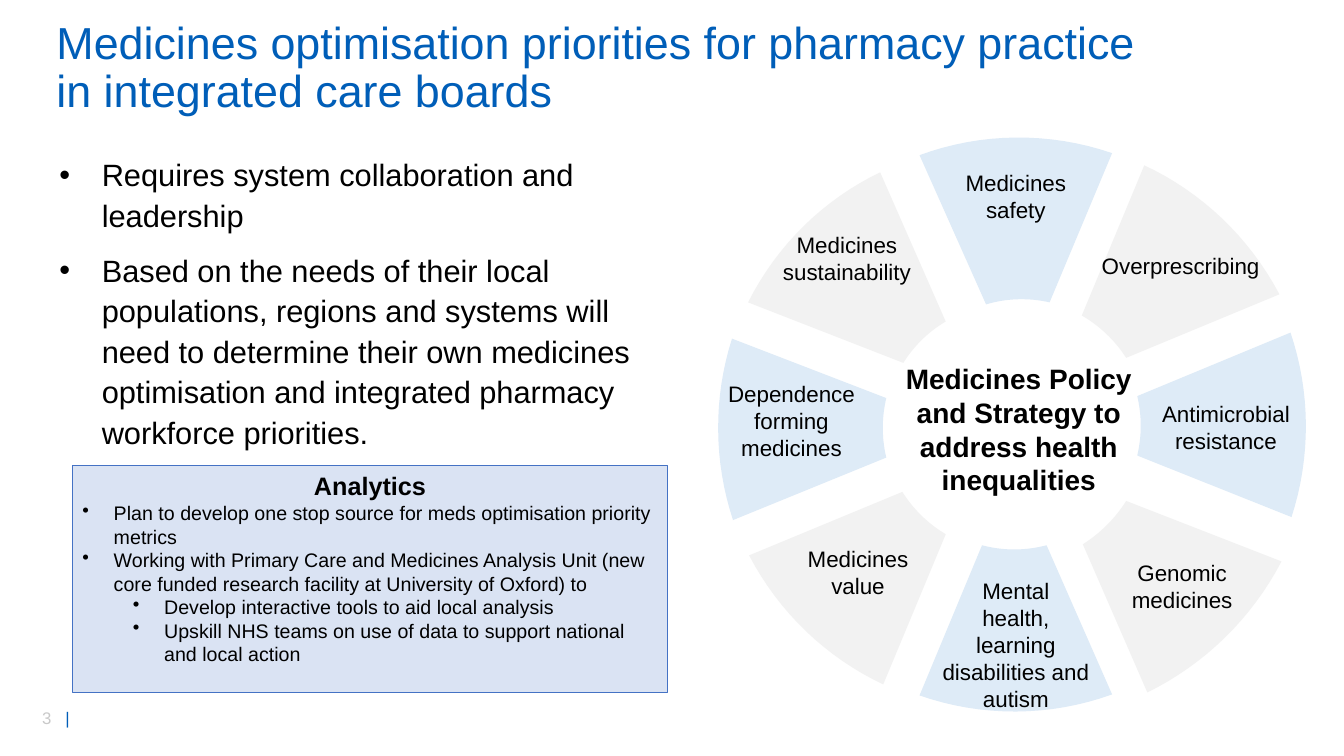
"""Builds the slide on medicines optimisation priorities."""
import math

from lxml import etree
from pptx import Presentation
from pptx.dml.color import RGBColor
from pptx.enum.shapes import MSO_SHAPE
from pptx.enum.text import MSO_ANCHOR, MSO_AUTO_SIZE, PP_ALIGN
from pptx.oxml.ns import qn
from pptx.util import Inches, Pt

LEFT, CENTER = PP_ALIGN.LEFT, PP_ALIGN.CENTER
TOP, MIDDLE = MSO_ANCHOR.TOP, MSO_ANCHOR.MIDDLE
NO_FIT = MSO_AUTO_SIZE.NONE
RECTANGLE = MSO_SHAPE.RECTANGLE

COLOURS = {
    "title": "005EB8", "text": "000000", "number": "C9C9C9",
    "grey": "F2F2F2", "pale": "DEEBF7", "panel": "DAE3F3", "edge": "4472C4",
}
WHEEL_CENTRE = (10.04, 4.21)
ARC_STEPS = 16

# colour, corners clockwise (outer start, outer end, inner end, inner start), text inset, lines
WEDGES = [
    ("grey", [(7.42, 3), (8.73, 1.71), (9.38, 3.19), (8.96, 3.6)], 0.58,
     ["Medicines sustainability"]),
    ("pale", [(7.27, 5.16), (7.26, 3.36), (8.79, 3.95), (8.79, 4.54)], 0, []),
    ("grey", [(8.76, 6.79), (7.43, 5.51), (8.95, 4.88), (9.38, 5.3)], 0, []),
    ("pale", [(11.03, 6.89), (9.12, 6.9), (9.74, 5.41), (10.38, 5.41)], 0.32,
     ["Mental", "health,", "learning disabilities and autism"]),
    ("grey", [(12.71, 5.57), (11.38, 6.87), (10.74, 5.4), (11.17, 4.97)], 0.58,
     ["Genomic medicines"]),
    ("pale", [(12.8, 3.3), (12.81, 5.13), (11.28, 4.52), (11.28, 3.93)], 0, []),
    ("grey", [(11.35, 1.64), (12.69, 2.92), (11.17, 3.55), (10.73, 3.13)], 0.86,
     ["Overprescribing"]),
    ("pale", [(9.12, 1.54), (11.03, 1.52), (10.41, 3), (9.78, 3.02)], 0.31,
     ["Medicines", "safety"]),
]
WHEEL_LABELS = [
    ((6.95, 3.72, 1.8, 0.91), "Dependence forming medicines", {}),
    ((11.18, 3.92, 1.96, 0.64), "Antimicrobial resistance", {}),
    ((7.68, 5.36, 1.66, 0.64), "Medicines value", {}),
    ((8.84, 3.54, 2.53, 1.45),
     "Medicines Policy and Strategy to address health inequalities",
     {"size": Pt(20), "bold": True}),
]
PRIORITIES = [
    "Requires system collaboration and leadership",
    "Based on the needs of their local populations, regions and systems will need to "
    "determine their own medicines optimisation and integrated pharmacy workforce priorities.",
]
ANALYTICS = [
    (0, "Plan to develop one stop source for meds optimisation priority metrics"),
    (0, "Working with Primary Care and Medicines Analysis Unit (new core funded "
        "research facility at University of Oxford) to"),
    (1, "Develop interactive tools to aid local analysis"),
    (1, "Upskill NHS teams on use of data to support national and local action"),
]


def arc(start, end):
    """Return points sweeping around the wheel centre from start to end."""
    centre_x, centre_y = WHEEL_CENTRE
    (r1, a1), (r2, a2) = [
        (math.dist(corner, WHEEL_CENTRE), math.atan2(corner[1] - centre_y, corner[0] - centre_x))
        for corner in (start, end)]
    sweep = math.remainder(a2 - a1, math.tau)
    points = []
    for step in range(ARC_STEPS + 1):
        share = step / ARC_STEPS
        radius, angle = r1 + (r2 - r1) * share, a1 + sweep * share
        points.append((Inches(centre_x + radius * math.cos(angle)),
                       Inches(centre_y + radius * math.sin(angle))))
    return points


class SlideBuilder:
    """Holds the text style and the current slide."""

    def __init__(self, slide):
        """Keep the slide and the default font."""
        self.slide = slide
        self.font = {"name": "Arial", "size": Pt(16), "bold": False}

    def run(self, paragraph, words, colour="text", **font):
        """Add styled words to a paragraph."""
        run = paragraph.add_run()
        run.text = words
        for name, value in {**self.font, **font}.items():
            setattr(run.font, name, value)
        run.font.color.rgb = RGBColor.from_string(COLOURS[colour])

    def frame(self, shape, **settings):
        """Format the text frame of a shape."""
        frame = shape.text_frame
        defaults = {"word_wrap": True, "auto_size": NO_FIT, "vertical_anchor": TOP}
        for name, value in {**defaults, **settings}.items():
            setattr(frame, name, value)
        return frame

    def paragraph(self, frame, first, **settings):
        """Return the first or a new paragraph with the given format."""
        paragraph = frame.paragraphs[0] if first else frame.add_paragraph()
        for name, value in settings.items():
            setattr(paragraph, name, value)
        return paragraph

    def bullet(self, paragraph, margin, hang):
        """Give a paragraph a hanging bullet."""
        properties = paragraph._p.get_or_add_pPr()
        properties.set("marL", str(Inches(margin)))
        properties.set("indent", str(-Inches(hang)))
        etree.SubElement(properties, qn("a:buChar")).set("char", "•")

    def place(self, placeholder, box):
        """Move a placeholder to its box."""
        for name, value in zip(("left", "top", "width", "height"), box):
            setattr(placeholder, name, Inches(value))
        return placeholder

    def title(self, box, words):
        """Fill the title placeholder."""
        frame = self.frame(self.place(self.slide.shapes.title, box), vertical_anchor=MIDDLE)
        heading = self.paragraph(frame, True, alignment=LEFT, line_spacing=0.9)
        self.run(heading, words, "title", size=Pt(32))

    def body(self, box, items):
        """Fill the body placeholder with a bullet list."""
        frame = self.frame(self.place(self.slide.placeholders[1], box),
                           margin_left=Inches(0.13), margin_right=Inches(0.13),
                           margin_top=Inches(0.07), margin_bottom=Inches(0.07))
        for index, words in enumerate(items):
            item = self.paragraph(frame, index == 0, line_spacing=1.1,
                                  space_before=Pt(10 if index else 0))
            self.bullet(item, 0.42, 0.42)
            self.run(item, words, size=Pt(22))

    def label(self, box, words, **font):
        """Add a centred text box."""
        frame = self.frame(self.slide.shapes.add_textbox(*map(Inches, box)))
        self.run(self.paragraph(frame, True, alignment=CENTER), words, **font)

    def fill(self, shape, colour):
        """Fill a shape flat, without a shadow."""
        shape.shadow.inherit = False
        shape.fill.solid()
        shape.fill.fore_color.rgb = RGBColor.from_string(COLOURS[colour])

    def wedge(self, colour, corners, inset, lines):
        """Add one segment of the wheel with its text."""
        outer_start, outer_end, inner_end, inner_start = corners
        outline = arc(outer_start, outer_end) + arc(inner_end, inner_start)
        builder = self.slide.shapes.build_freeform(*outline[0])
        builder.add_line_segments(outline[1:], close=True)
        segment = builder.convert_to_shape()
        self.fill(segment, colour)
        segment.line.fill.background()
        if lines:
            frame = self.frame(segment, margin_top=Inches(inset))
            for index, words in enumerate(lines):
                self.run(self.paragraph(frame, index == 0, alignment=CENTER), words)

    def panel(self, box, heading, items):
        """Add the bordered panel with a heading and two bullet levels."""
        panel = self.slide.shapes.add_shape(RECTANGLE, *map(Inches, box))
        self.fill(panel, "panel")
        panel.line.color.rgb = RGBColor.from_string(COLOURS["edge"])
        panel.line.width = Pt(0.75)
        frame = self.frame(panel)
        self.run(self.paragraph(frame, True, alignment=CENTER), heading, size=Pt(18), bold=True)
        for level, words in items:
            item = self.paragraph(frame, False, alignment=LEFT, level=level)
            self.bullet(item, 0.31 + 0.5 * level, 0.31)
            self.run(item, words, size=Pt(14))

    def page_number(self, box, number):
        """Add the page number and its divider."""
        frame = self.frame(self.slide.shapes.add_textbox(*map(Inches, box)))
        footer = self.paragraph(frame, True, alignment=LEFT)
        tabs = etree.SubElement(footer._p.get_or_add_pPr(), qn("a:tabLst"))
        etree.SubElement(tabs, qn("a:tab"), pos=str(Inches(0.23)), algn="l")
        self.run(footer, number, "number", size=Pt(12))
        self.run(footer, "\t|", "title", size=Pt(12))


def main():
    """Build and save the slide."""
    deck = Presentation()
    deck.slide_width, deck.slide_height = Inches(13.33), Inches(7.5)
    builder = SlideBuilder(deck.slides.add_slide(deck.slide_layouts[1]))
    builder.page_number((0.32, 6.97, 0.71, 0.3), "3")
    builder.title((0.46, 0.35, 11.09, 0.67),
                  "Medicines optimisation priorities for pharmacy practice "
                  "in integrated care boards")
    builder.body((0.46, 1.44, 6.27, 3.13), PRIORITIES)
    for wedge in WEDGES:
        builder.wedge(*wedge)
    for box, words, font in WHEEL_LABELS:
        builder.label(box, words, **font)
    builder.panel((0.72, 4.62, 5.9, 2.25), "Analytics", ANALYTICS)
    deck.save("out.pptx")


if __name__ == "__main__":
    main()
